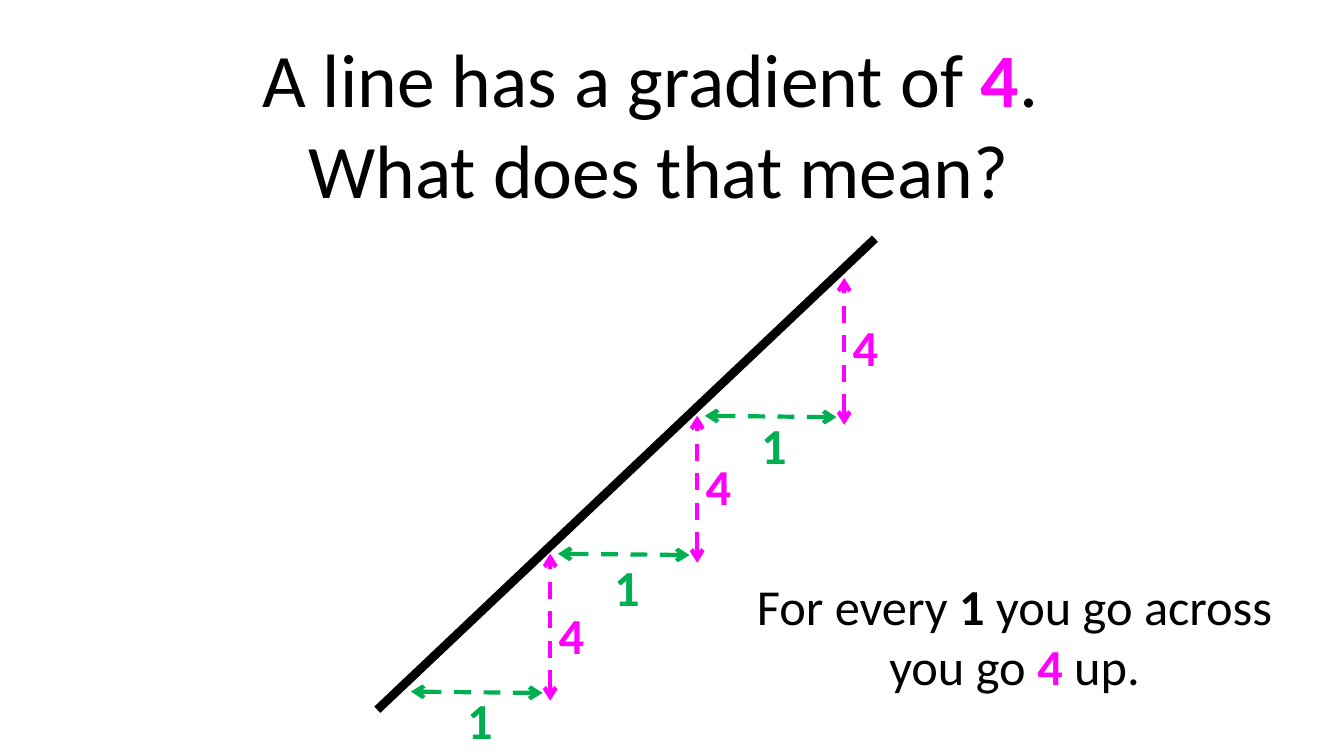
import dataclasses

import pptx
import pptx.dml.color
import pptx.enum.dml
import pptx.enum.shapes
import pptx.enum.text
import pptx.oxml
import pptx.oxml.ns
import pptx.util

Pt = pptx.util.Pt


@dataclasses.dataclass(frozen=True)
class Theme:
    font: str = "Calibri"
    ink: str = "000000"
    across: str = "00B050"
    up: str = "FF00FF"
    title_size: float = 54
    body_size: float = 36
    line_width: float = 6.25
    arrow_width: float = 3


THEME = Theme()


@dataclasses.dataclass(frozen=True)
class Box:
    left: float
    top: float
    width: float
    height: float


def add_text(slide, box, size, paragraphs):
    """Each paragraph is a list of (text, colour, bold) runs."""
    shape = slide.shapes.add_textbox(Pt(box.left), Pt(box.top), Pt(box.width), Pt(box.height))
    frame = shape.text_frame
    frame.word_wrap = True
    frame.auto_size = pptx.enum.text.MSO_AUTO_SIZE.SHAPE_TO_FIT_TEXT
    for index, runs in enumerate(paragraphs):
        paragraph = frame.add_paragraph() if index else frame.paragraphs[0]
        paragraph.alignment = pptx.enum.text.PP_ALIGN.CENTER
        for text, colour, bold in runs:
            run = paragraph.add_run()
            run.text = text
            run.font.name = THEME.font
            run.font.size = Pt(size)
            run.font.bold = bold
            run.font.color.rgb = pptx.dml.color.RGBColor.from_string(colour)


def add_line(slide, start, end, colour, width):
    connector = slide.shapes.add_connector(
        pptx.enum.shapes.MSO_CONNECTOR.STRAIGHT, *map(Pt, start + end))
    connector.line.color.rgb = pptx.dml.color.RGBColor.from_string(colour)
    connector.line.width = Pt(width)
    properties = connector._element.spPr
    properties.append(pptx.oxml.parse_xml(
        f"<a:effectLst {pptx.oxml.ns.nsdecls('a')}/>"))
    return connector


def add_double_arrow(slide, start, end, colour):
    connector = add_line(slide, start, end, colour, THEME.arrow_width)
    connector.line.dash_style = pptx.enum.dml.MSO_LINE.DASH
    outline = connector.line._get_or_add_ln()
    for tag in ("headEnd", "tailEnd"):
        outline.append(pptx.oxml.parse_xml(
            f"<a:{tag} {pptx.oxml.ns.nsdecls('a')} type='arrow'/>"))


def add_step(slide, box, across_label_top, up_label_top):
    """One step: across along the bottom of the box, then up its right side."""
    right, bottom = box.left + box.width, box.top + box.height
    add_double_arrow(slide, (box.left, bottom - 6.5), (right - 5.5, bottom - 5.5), THEME.across)
    add_double_arrow(slide, (right, bottom), (right, box.top), THEME.up)
    add_text(slide, Box(box.left + 15.5, box.top + across_label_top, 67.5, 51),
             THEME.body_size, [[("1", THEME.across, True)]])
    add_text(slide, Box(right - 8.5, box.top + up_label_top, 47.5, 51),
             THEME.body_size, [[("4", THEME.up, True)]])


def add_gradient_diagram(slide, box):
    # Sloping line from bottom left to top right
    add_line(slide, (box.left, box.top + box.height), (box.left + box.width, box.top),
             THEME.ink, THEME.line_width)
    # Steps climb the line by equal amounts; each has its own label heights
    pitch_x, pitch_y = 105, 98.5
    label_tops = [(93.5, 32.5), (97, 24.5), (94, 24)]
    for index, (across_label_top, up_label_top) in enumerate(label_tops):
        step = Box(box.left + 24 + index * pitch_x,
                   box.top + 225 - index * pitch_y, 99.5, 105)
        add_step(slide, step, across_label_top, up_label_top)


def add_question(slide, box):
    add_text(slide, box, THEME.title_size, [
        [("A line has a gradient of ", THEME.ink, False), ("4", THEME.up, True),
         (". ", THEME.ink, False)],
        [("What does that mean?", THEME.ink, False)],
    ])


def add_explanation(slide, box):
    add_text(slide, box, THEME.body_size, [
        [("For every ", THEME.ink, False), ("1", THEME.ink, True),
         (" you go across", THEME.ink, False)],
        [("you go ", THEME.ink, False), ("4", THEME.up, True),
         (" up.", THEME.ink, False)],
    ])


def main():
    presentation = pptx.Presentation()
    presentation.slide_width, presentation.slide_height = Pt(960), Pt(540)
    slide = presentation.slides.add_slide(presentation.slide_layouts[6])
    add_gradient_diagram(slide, Box(269.5, 170.5, 355.5, 336.5))
    add_question(slide, Box(21, 19.5, 899, 138))
    add_explanation(slide, Box(527, 407, 395.5, 94.5))
    presentation.save("out.pptx")


if __name__ == "__main__":
    main()
